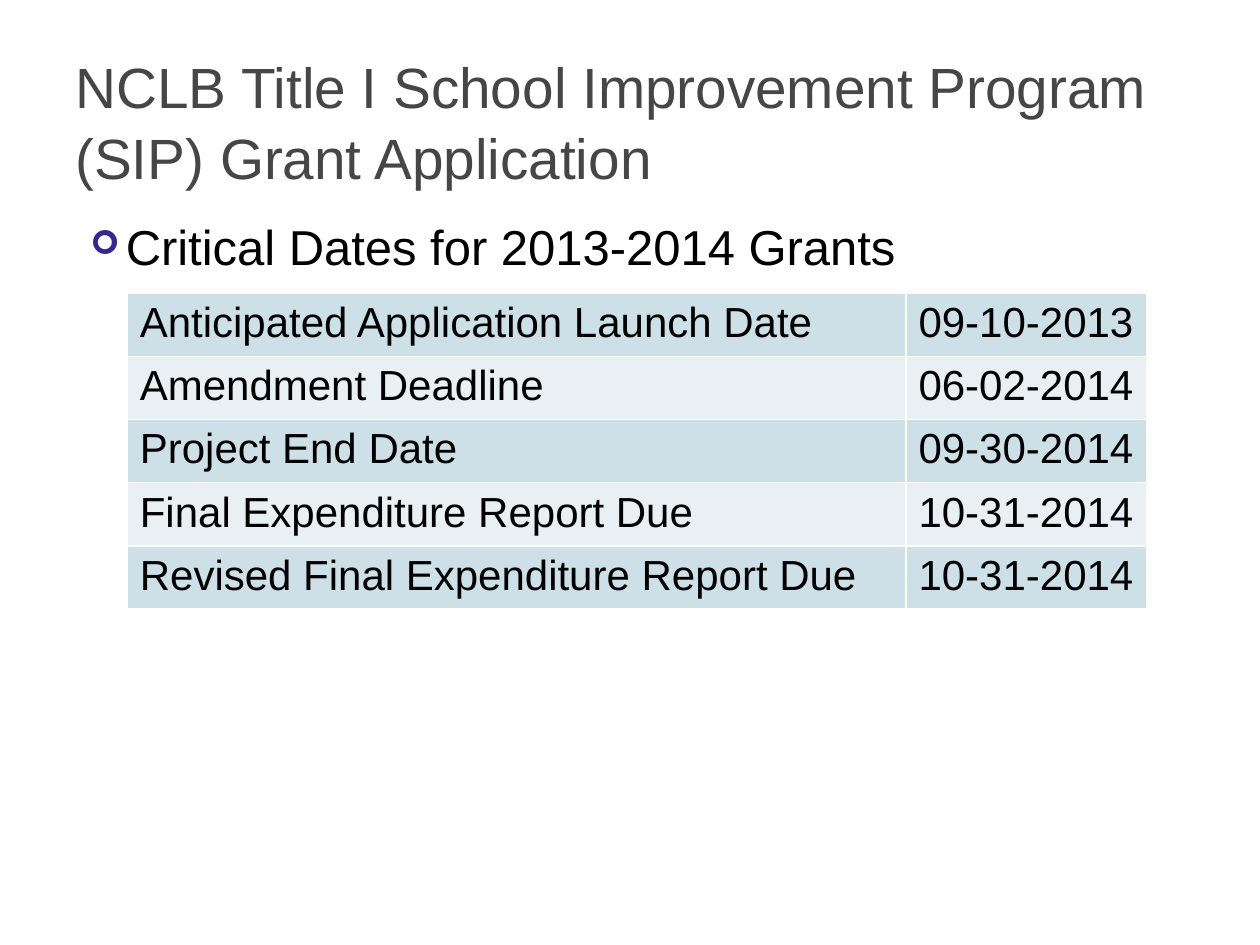
from lxml import etree
from pptx import Presentation
from pptx.dml.color import RGBColor
from pptx.enum.text import MSO_ANCHOR
from pptx.oxml.ns import qn
from pptx.util import Inches, Pt

COLORS = {
    "title": "464646",
    "text": "000000",
    "bullet": "34278D",
    "row_dark": "CDE0E8",
    "row_light": "E8F0F4",
    "border": "FFFFFF",
}
FONT = "Arial"
DATES = [
    ("Anticipated Application Launch Date", "09-10-2013"),
    ("Amendment Deadline", "06-02-2014"),
    ("Project End Date", "09-30-2014"),
    ("Final Expenditure Report Due", "10-31-2014"),
    ("Revised Final Expenditure Report Due", "10-31-2014"),
]


def color(name):
    return RGBColor.from_string(COLORS[name])


def add_run(paragraph, text, size, color_name="text"):
    run = paragraph.add_run()
    run.text = text
    run.font.name = FONT
    run.font.size = Pt(size)
    run.font.color.rgb = color(color_name)


def add_text_frame(slide, left, top, width, height):
    box = slide.shapes.add_textbox(
        Inches(left), Inches(top), Inches(width), Inches(height))
    frame = box.text_frame
    frame.word_wrap = True
    frame.margin_top = Inches(0.1)
    return frame


def add_bullet(paragraph, char, indent, hanging):
    props = paragraph._p.get_or_add_pPr()
    props.set("marL", str(Inches(indent)))
    props.set("indent", str(-Inches(hanging)))
    bullet_color = etree.SubElement(props, qn("a:buClr"))
    etree.SubElement(bullet_color, qn("a:srgbClr"), val=COLORS["bullet"])
    etree.SubElement(props, qn("a:buSzPct"), val="68000")
    etree.SubElement(props, qn("a:buFont"), typeface="Wingdings")
    etree.SubElement(props, qn("a:buChar"), char=char)


def set_borders(cell, width):
    props = cell._tc.get_or_add_tcPr()
    for position, side in enumerate(("lnL", "lnR", "lnT", "lnB")):
        line = etree.Element(qn(f"a:{side}"), w=str(Pt(width)))
        fill = etree.SubElement(line, qn("a:solidFill"))
        etree.SubElement(fill, qn("a:srgbClr"), val=COLORS["border"])
        props.insert(position, line)


def add_title(slide, left, top, width, height):
    frame = add_text_frame(slide, left, top, width, height)
    frame.vertical_anchor = MSO_ANCHOR.MIDDLE
    heading = frame.paragraphs[0]
    heading.line_spacing = 1.05
    add_run(heading, "NCLB Title I School Improvement Program (SIP) Grant Application",
            32.4, "title")


def add_body(slide, left, top, width, height):
    frame = add_text_frame(slide, left, top, width, height)
    subject = frame.paragraphs[0]
    add_bullet(subject, "➢", 0.4, 0.28)
    add_run(subject, "Critical Dates for 2013-2014 Grants", 28)


def add_dates_table(slide, left, top, width, row_height, date_width):
    table = slide.shapes.add_table(
        len(DATES), 2, Inches(left), Inches(top), Inches(width),
        Inches(row_height * len(DATES))).table
    table.first_row = False
    table.horz_banding = False
    table.columns[0].width = Inches(width - date_width)
    table.columns[1].width = Inches(date_width)
    for row, entry in enumerate(DATES):
        table.rows[row].height = Inches(row_height)
        for column, text in enumerate(entry):
            cell = table.cell(row, column)
            cell.fill.solid()
            cell.fill.fore_color.rgb = color("row_light" if row % 2 else "row_dark")
            set_borders(cell, 1)
            add_run(cell.text_frame.paragraphs[0], text, 24)


def main():
    deck = Presentation()
    deck.slide_width, deck.slide_height = Inches(10), Inches(7.5)
    slide = deck.slides.add_slide(deck.slide_layouts[6])
    # Bulleted subject
    add_body(slide, 0.5, 1.62, 9, 4.95)
    # Heading
    add_title(slide, 0.5, 0.3, 9, 1.25)
    # Critical dates
    add_dates_table(slide, 1.01, 2.33, 8.09, 0.47, 1.91)
    deck.save("out.pptx")


if __name__ == "__main__":
    main()
